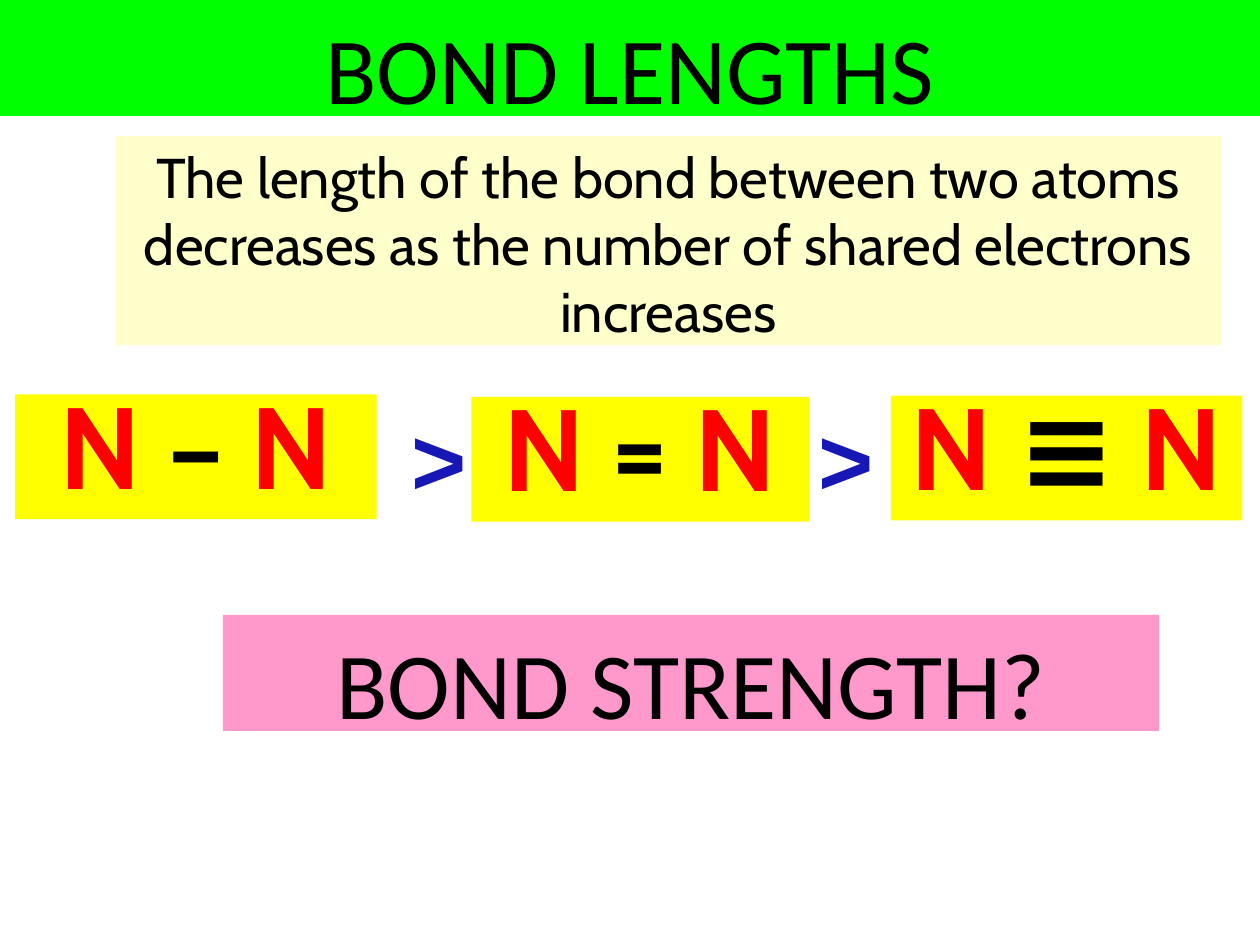
from pptx import Presentation
from pptx.dml.color import RGBColor
from pptx.enum.shapes import MSO_SHAPE
from pptx.enum.text import MSO_ANCHOR, MSO_AUTO_SIZE, PP_ALIGN
from pptx.util import Inches, Pt
from lxml import etree

RECT = MSO_SHAPE.RECTANGLE
TOP = MSO_ANCHOR.TOP
CENTER = PP_ALIGN.CENTER
FIXED, GROW = MSO_AUTO_SIZE.NONE, MSO_AUTO_SIZE.SHAPE_TO_FIT_TEXT

CELL = Inches(0.1)  # the slide is a grid of 100 columns by 75 rows
COLS, ROWS = 100, 75
HEX = {"green": "00FF00", "cream": "FFFFCC", "yellow": "FFFF00", "pink": "FF99CC",
       "black": "000000", "red": "FF0000", "blue": "1717B5"}
HEAD = {"name": "Calibri", "size": Pt(54), "bold": False}
BODY = {"name": "Cabin", "size": Pt(32), "bold": False}
ATOM = {"name": "Cabin", "size": Pt(66), "bold": True}
SIGN = {"name": "Arial", "size": Pt(54), "bold": True}


def color(name):
    return RGBColor.from_string(HEX[name])


def apply(target, values):
    for key, value in values.items():
        setattr(target, key, value)


def place(shape, box):
    names = ("left", "top", "width", "height")
    apply(shape, {key: int(n * CELL) for key, n in zip(names, box)})


def paint(shape, fill):
    shape.fill.solid()
    shape.fill.fore_color.rgb = color(fill)
    shape.line.fill.background()


def write(shape, parts, font, line=1.0, pad=0.05, fit=FIXED, wrap=True):
    """Set one centred paragraph from (text, colour) parts."""
    frame = shape.text_frame
    apply(frame, {"auto_size": fit, "word_wrap": wrap, "vertical_anchor": TOP,
                  "margin_left": Inches(0.1), "margin_right": Inches(0.1),
                  "margin_top": Inches(pad), "margin_bottom": Inches(0.05)})
    para = frame.paragraphs[0]
    apply(para, {"alignment": CENTER, "line_spacing": line, "space_before": Pt(0)})
    for text, tint in parts:
        run = para.add_run()
        run.text = text
        apply(run.font, font)
        run.font.color.rgb = color(tint)
    return para


def block(slide, box, fill):
    shape = slide.shapes.add_shape(RECT, 0, 0, CELL, CELL)
    shape.shadow.inherit = False
    place(shape, box)
    paint(shape, fill)
    return shape


def title(slide, box):
    shape = slide.shapes.title
    place(shape, box)
    paint(shape, "green")
    write(shape, [("BOND LENGTHS", "black")], HEAD, pad=0.08)


def rule(slide, box):
    shape = slide.placeholders[1]
    place(shape, box)
    paint(shape, "cream")
    text = ("The length of the bond between two atoms decreases "
            "as the number of shared electrons increases")
    props = write(shape, [(text, "black")], BODY)._p.get_or_add_pPr()
    for key in ("marL", "indent"):
        props.set(key, "0")
    etree.SubElement(props, props.tag.replace("pPr", "buNone"))


def bond(slide, box, link):
    parts = [("N ", "red"), (link + " ", "black"), ("N", "red")]
    write(block(slide, box, "yellow"), parts, ATOM, line=0.8, fit=GROW)


def more(slide, box):
    shape = slide.shapes.add_textbox(0, 0, CELL, CELL)
    place(shape, box)
    write(shape, [(">", "blue")], SIGN, fit=GROW, wrap=False)


def compare(slide, box):
    """Line up the three bonds, longest first, with signs between them."""
    left, top, _, high = box
    for x, y, wide, link in ((0, 0, 28.7, "–"), (36.2, 0.2, 26.8, "="),
                             (69.5, 0.1, 27.9, "≡")):
        bond(slide, (left + x, top + y, wide, high), link)
    for x in (30.4, 62.7):
        more(slide, (left + x, top, 6.5, 10.1))


def query(slide, box):
    write(block(slide, box, "pink"), [("BOND STRENGTH?", "black")], HEAD, pad=0.08)


def main():
    deck = Presentation()
    deck.slide_width, deck.slide_height = COLS * CELL, ROWS * CELL
    slide = deck.slides.add_slide(deck.slide_layouts[1])
    title(slide, (0, 0, COLS, 9.2))
    rule(slide, (9.2, 10.8, 87.7, 16.6))
    compare(slide, (1.2, 31.3, 97.4, 9.9))
    query(slide, (17.7, 48.8, 74.3, 9.2))
    deck.save("out.pptx")


if __name__ == "__main__":
    main()
